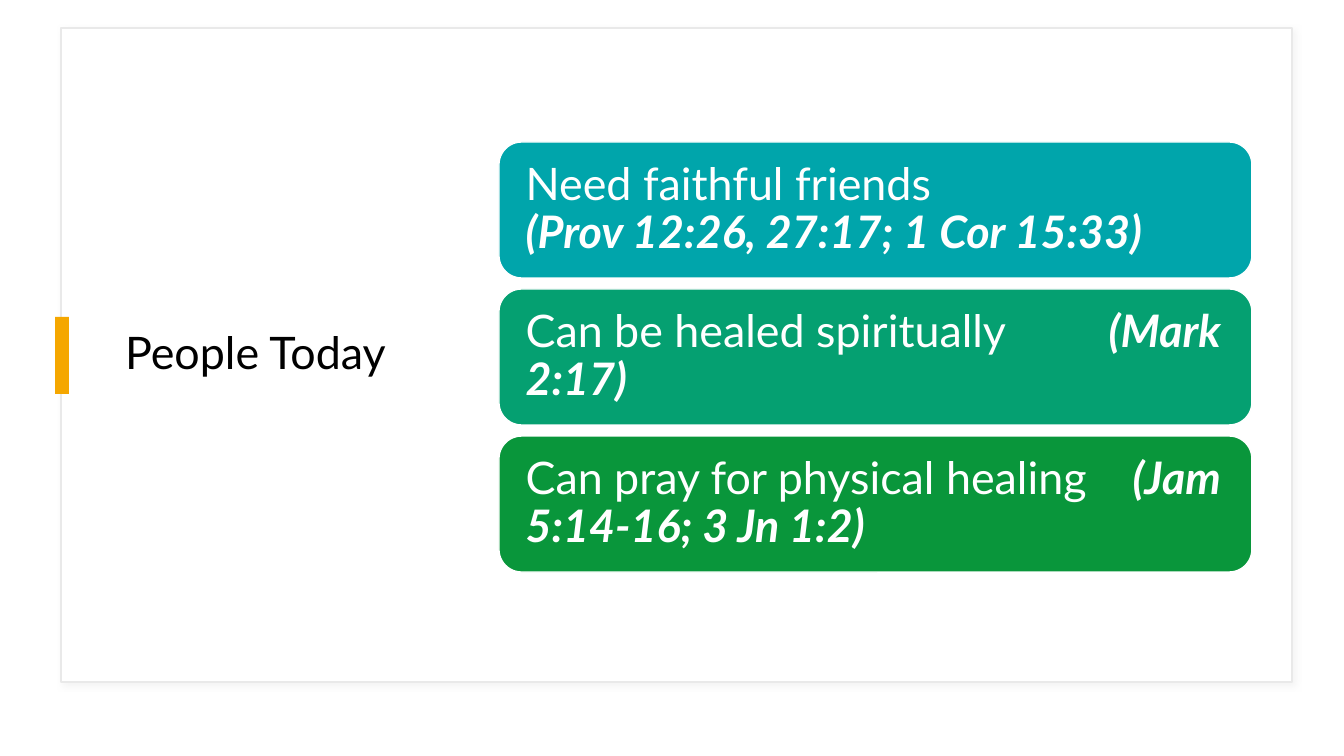
import pptx
import pptx.dml.color
import pptx.enum.shapes
import pptx.enum.text
import pptx.oxml
import pptx.util
from lxml import etree

SHAPE = pptx.enum.shapes.MSO_SHAPE
MIDDLE = pptx.enum.text.MSO_ANCHOR.MIDDLE
LEFT = pptx.enum.text.PP_ALIGN.LEFT
A = "http://schemas.openxmlformats.org/drawingml/2006/main"


def px(length):
    return pptx.util.Emu(round(length * 914400 / 100.8))


def color(hex_string):
    return pptx.dml.color.RGBColor.from_string(hex_string)


presentation = pptx.Presentation()
presentation.slide_width = px(1344)
presentation.slide_height = px(756)
slide = presentation.slides.add_slide(presentation.slide_layouts[5])

# White panel with a soft shadow
panel = slide.shapes.add_shape(SHAPE.RECTANGLE, px(61), px(28), px(1231), px(654))
panel.fill.solid()
panel.fill.fore_color.rgb = color("FFFFFF")
panel.line.color.rgb = color("E9E9E9")
panel.line.width = pptx.util.Pt(1)
panel._element.spPr.append(pptx.oxml.parse_xml(
    f'<a:effectLst xmlns:a="{A}"><a:outerShdw blurRad="50800" dist="38100" dir="2700000">'
    '<a:srgbClr val="D9D9D9"><a:alpha val="30000"/></a:srgbClr>'
    '</a:outerShdw></a:effectLst>'))

# Title, brought in front of the panel
title = slide.shapes.title
panel._element.addnext(title._element)
title.left, title.top, title.width, title.height = px(115), px(55), px(330), px(600)
title.text_frame.text = "People Today"
title.text_frame.vertical_anchor = MIDDLE
heading = title.text_frame.paragraphs[0]
heading.alignment = LEFT
heading.line_spacing = 0.9
heading.font.size = pptx.util.Pt(32)
heading.font.name = "Lato"
heading.font.color.rgb = color("000000")

# Accent bar on the panel edge
accent = slide.shapes.add_shape(SHAPE.RECTANGLE, px(55), px(317), px(14), px(77))
accent.shadow.inherit = False
accent.fill.solid()
accent.fill.fore_color.rgb = color("F5A700")
accent.line.fill.background()

# Cards: statement, reference, fill, tab stop of the reference
cards = [
    ("Need faithful friends", "(Prov 12:26, 27:17; 1 Cor 15:33)", "00A5AB", 611),
    ("Can be healed spiritually", "(Mark 2:17)", "05A071", 583),
    ("Can pray for physical healing", "(Jam 5:14-16; 3 Jn 1:2)", "09963B", 607),
]
for row, (statement, reference, fill, reference_start) in enumerate(cards):
    card = slide.shapes.add_shape(
        SHAPE.ROUNDED_RECTANGLE, px(499), px(142 + 147 * row), px(753), px(136))
    card.shadow.inherit = False
    card.fill.solid()
    card.fill.fore_color.rgb = color(fill)
    card.line.color.rgb = color("FFFFFF")
    card.line.width = pptx.util.Pt(1)

    frame = card.text_frame
    frame.word_wrap = True
    frame.vertical_anchor = MIDDLE
    frame.margin_left = frame.margin_right = px(20)
    frame.margin_top = frame.margin_bottom = px(13)

    verse = frame.paragraphs[0]
    verse.alignment = LEFT
    verse.line_spacing = 0.9
    tabs = etree.SubElement(verse._p.get_or_add_pPr(), f"{{{A}}}tabLst")
    etree.SubElement(tabs, f"{{{A}}}tab", pos=str(px(reference_start)), algn="l")
    verse.font.size = pptx.util.Pt(32)
    verse.font.name = "Lato"
    verse.font.color.rgb = color("FFFFFF")
    verse.add_run().text = statement + "\t"
    citation = verse.add_run()
    citation.text = reference
    citation.font.bold = True
    citation.font.italic = True

presentation.save("out.pptx")
